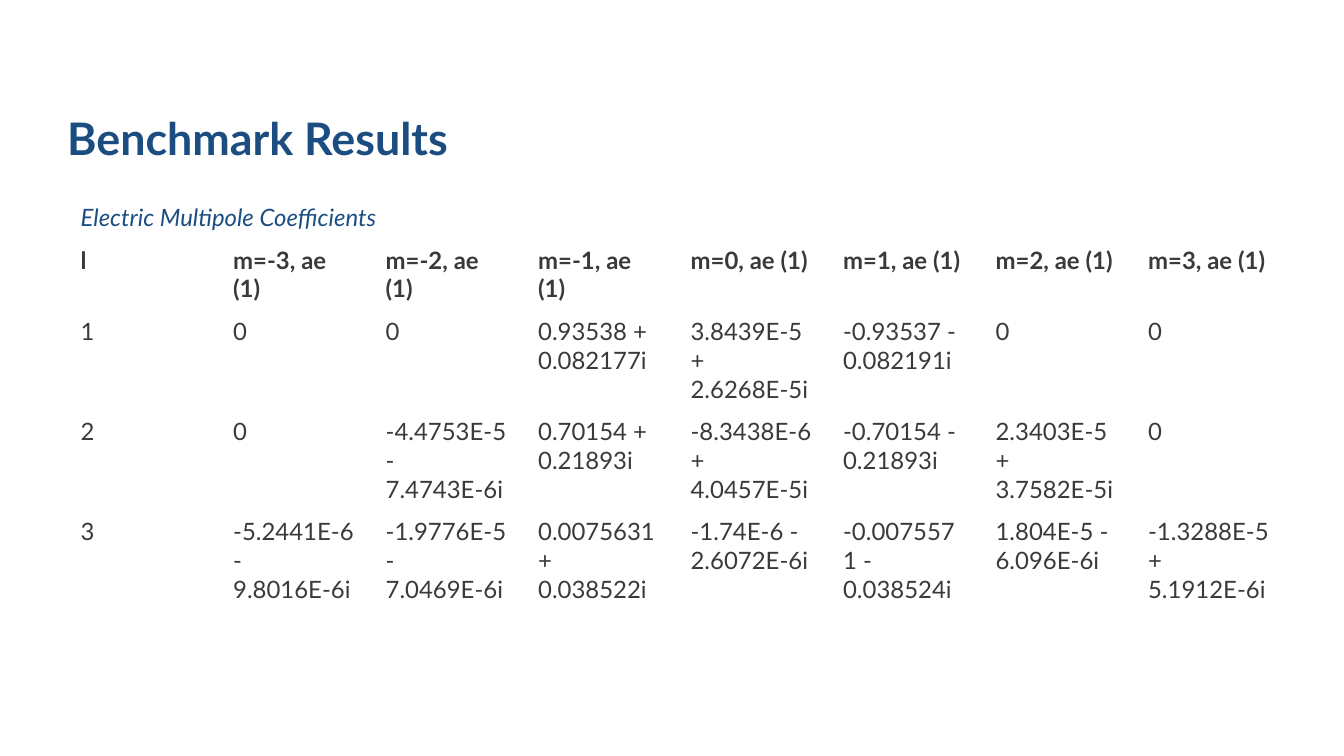
from pptx import Presentation
from pptx.dml.color import RGBColor as Rgb
from pptx.enum.text import MSO_ANCHOR as Anchor, PP_ALIGN as Align
from pptx.util import Inches, Pt

WIDTH = 10
HEIGHT = WIDTH * 9 / 16
LEFT = 0.5
CONTENT_WIDTH = 9.08
ROW = 0.28
FONT = "Lato"
COLORS = {"heading": "1B4D81", "body": "393A39", "page": "FFFFFF"}
CAPTION = "Electric Multipole Coefficients"
HEADERS = ["l"] + [f"m={order}, ae (1)" for order in range(-3, 4)]
COEFFICIENTS = [
    ["0", "0", "0.93538 + 0.082177i", "3.8439E-5 + 2.6268E-5i",
     "-0.93537 - 0.082191i", "0", "0"],
    ["0", "-4.4753E-5 - 7.4743E-6i", "0.70154 + 0.21893i", "-8.3438E-6 + 4.0457E-5i",
     "-0.70154 - 0.21893i", "2.3403E-5 + 3.7582E-5i", "0"],
    ["-5.2441E-6 - 9.8016E-6i", "-1.9776E-5 - 7.0469E-6i", "0.0075631 + 0.038522i",
     "-1.74E-6 - 2.6072E-6i", "-0.0075571 - 0.038524i", "1.804E-5 - 6.096E-6i",
     "-1.3288E-5 + 5.1912E-6i"],
]


def add_span(para, text, size, color, bold=False, italic=False):
    """Add one formatted run to a paragraph."""
    span = para.add_run()
    span.text = text
    font = span.font
    font.name, font.size = FONT, Pt(size)
    font.bold, font.italic = bold, italic
    font.color.rgb = Rgb.from_string(COLORS[color])


def set_title(page, text):
    """Place and fill the title placeholder."""
    title = page.shapes.title
    title.left, title.top = Inches(LEFT), Inches(0.65)
    title.width, title.height = Inches(CONTENT_WIDTH), Inches(0.8)
    frame = title.text_frame
    frame.word_wrap = True
    frame.vertical_anchor = Anchor.MIDDLE
    frame.margin_left = 0
    para = frame.paragraphs[0]
    para.alignment = Align.LEFT
    para.line_spacing = 0.9
    add_span(para, text, 24, "heading", bold=True)


def fill_cell(cell, text, color="body", **style):
    """Write text into a cell without a fill."""
    cell.fill.background()
    cell.vertical_anchor = Anchor.TOP
    add_span(cell.text_frame.paragraphs[0], text, 12.8, color, **style)


def add_results(page):
    """Add the coefficient table under a caption row."""
    body = [[str(degree), *values] for degree, values in enumerate(COEFFICIENTS, 1)]
    rows, columns = len(body) + 2, len(HEADERS)
    table = page.shapes.add_table(
        rows, columns, Inches(LEFT), Inches(1.46),
        Inches(CONTENT_WIDTH), Inches(rows * ROW)).table
    table.first_row = table.horz_banding = False
    table.cell(0, 0).merge(table.cell(0, columns - 1))
    fill_cell(table.cell(0, 0), CAPTION, "heading", italic=True)
    for row, values in enumerate([HEADERS, *body], 1):
        for column, value in enumerate(values):
            fill_cell(table.cell(row, column), value, bold=row == 1)


def main():
    """Build and save the deck."""
    deck = Presentation()
    deck.slide_width, deck.slide_height = Inches(WIDTH), Inches(HEIGHT)
    page = deck.slides.add_slide(deck.slide_layouts[5])
    background = page.background.fill
    background.solid()
    background.fore_color.rgb = Rgb.from_string(COLORS["page"])
    set_title(page, "Benchmark Results")
    add_results(page)
    deck.save("out.pptx")


if __name__ == "__main__":
    main()
